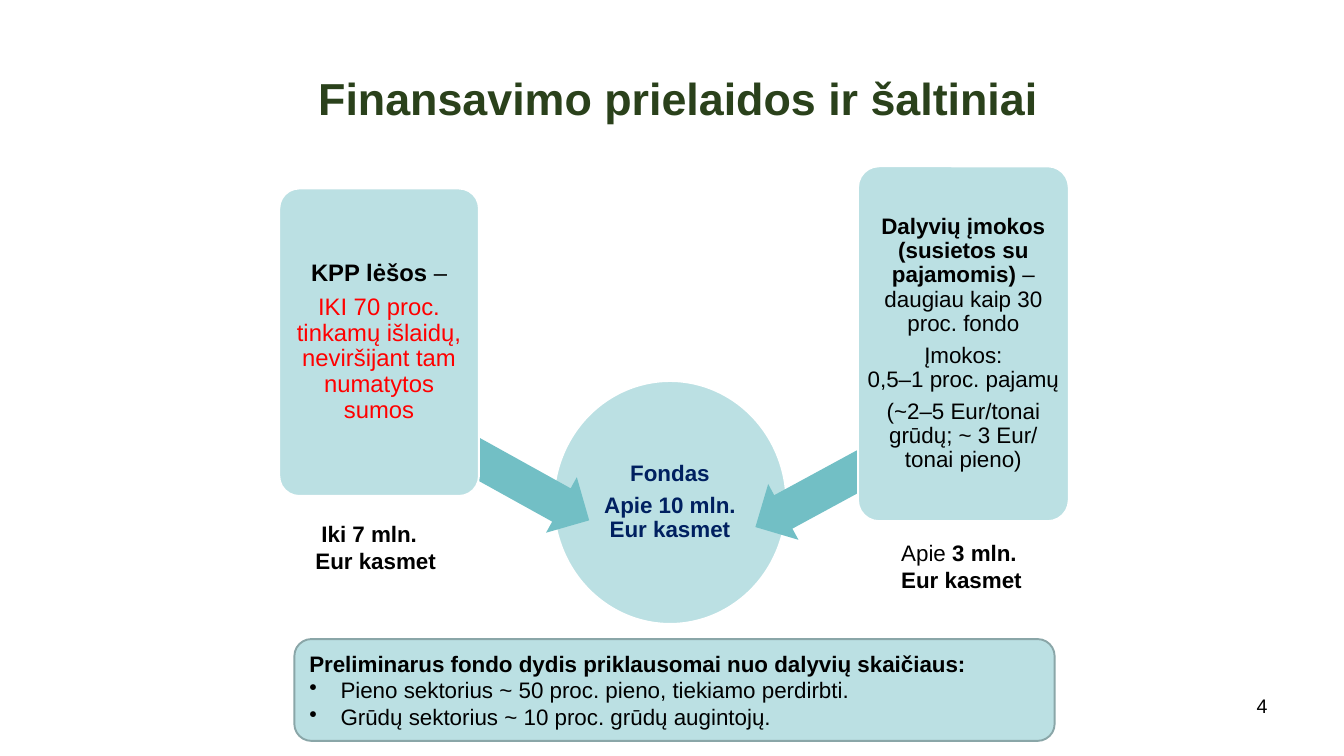
from lxml import etree
from pptx import Presentation, util as u
from pptx.dml import color
from pptx.enum import shapes, text
from pptx.oxml import ns

COLORS = {
    "title": "2A411B", "black": "000000", "red": "FF0000", "navy": "002060",
    "panel": "BBE0E3", "arrow": "72BFC5", "white": "FFFFFF", "edge": "8AA6A8",
}
KIND = shapes.MSO_SHAPE
ALIGN = text.PP_ALIGN
ANCHOR = text.MSO_ANCHOR


class FundingSlide:
    """Style and drawing methods for the funding slide."""

    font = "Arial"

    def __init__(self, deck):
        self.slide = deck.slides.add_slide(deck.slide_layouts[6])

    def rgb(self, name):
        return color.RGBColor.from_string(COLORS[name])

    def fill_text(self, frame, paragraphs, size, align=ALIGN.LEFT, anchor=ANCHOR.TOP,
                  inset=None, spacing=None, first_indent=0):
        frame.word_wrap = True
        frame.vertical_anchor = anchor
        if inset is not None:
            frame.margin_left = frame.margin_right = u.Inches(inset)
            frame.margin_top = frame.margin_bottom = u.Inches(inset)
        for index, (runs, after, bulleted) in enumerate(paragraphs):
            line = frame.paragraphs[0] if index == 0 else frame.add_paragraph()
            line.alignment = align
            properties = line._p.get_or_add_pPr()
            if bulleted:
                properties.set("marL", str(u.Inches(0.31)))
                properties.set("indent", str(u.Inches(-0.31)))
                etree.SubElement(properties, ns.qn("a:buChar")).set("char", "•")
            elif first_indent:
                properties.set("indent", str(u.Inches(first_indent)))
            if spacing:
                line.line_spacing = spacing
                line.space_after = u.Pt(after)
            for words, bold, tint in runs:
                run = line.add_run()
                run.text = words
                run.font.name = self.font
                run.font.size = u.Pt(size)
                run.font.bold = bold
                run.font.color.rgb = self.rgb(tint)

    def label(self, place, runs, size, **layout):
        box = self.slide.shapes.add_textbox(*map(u.Inches, place))
        self.fill_text(box.text_frame, [(runs, 0, False)], size, **layout)

    def shape(self, kind, place, fill, edge=None, adjust=(), turn=0):
        drawn = self.slide.shapes.add_shape(kind, *map(u.Inches, place))
        drawn.shadow.inherit = False
        drawn.rotation = turn
        drawn.fill.solid()
        drawn.fill.fore_color.rgb = self.rgb(fill)
        for index, value in enumerate(adjust):
            drawn.adjustments[index] = value
        if edge:
            drawn.line.color.rgb = self.rgb(edge)
            drawn.line.width = u.Pt(1.35)
        else:
            drawn.line.fill.background()
        return drawn

    def panel(self, kind, place, paragraphs, size, inset, adjust=()):
        drawn = self.shape(kind, place, "panel", "white", adjust)
        self.fill_text(drawn.text_frame, paragraphs, size, ALIGN.CENTER,
                       ANCHOR.MIDDLE, inset, spacing=0.9)

    def arrow(self, place, turn):
        self.shape(KIND.LEFT_ARROW, place, "arrow", adjust=(0.6, 0.5), turn=turn)

    def summary(self, place, paragraphs):
        drawn = self.shape(KIND.ROUNDED_RECTANGLE, place, "panel", "edge")
        self.fill_text(drawn.text_frame, paragraphs, 16, anchor=ANCHOR.MIDDLE)


def main():
    deck = Presentation()
    deck.slide_width, deck.slide_height = u.Inches(13.33), u.Inches(7.5)
    funding = FundingSlide(deck)

    funding.label((0.73, 0.5, 12, 0.94),
                  [("Finansavimo prielaidos ir šaltiniai", True, "title")], 32,
                  align=ALIGN.CENTER, anchor=ANCHOR.MIDDLE)
    funding.label((9.56, 6.83, 3.11, 0.52), [("4", False, "black")], 14,
                  align=ALIGN.RIGHT)

    funding.panel(KIND.OVAL, (5.49, 3.78, 2.31, 2.41), [
        ([("Fondas", True, "navy")], 5.5, False),
        ([("Apie 10 mln. Eur kasmet", True, "navy")], 5.5, False),
    ], 16, 0.01)

    funding.arrow((3.96, 4.36, 2.01, 0.63), 209)
    funding.panel(KIND.ROUNDED_RECTANGLE, (2.77, 1.87, 1.98, 3.05), [
        ([("KPP lėšos ", True, "black"), ("–", False, "black")], 6, False),
        ([("IKI 70 proc. tinkamų išlaidų, neviršijant tam numatytos sumos",
           False, "red")], 6, False),
    ], 17, 0.04, (0.1,))

    funding.arrow((7.37, 4.43, 2.03, 0.63), 331.5)
    funding.panel(KIND.ROUNDED_RECTANGLE, (8.51, 1.65, 2.09, 3.52), [
        ([("Dalyvių įmokos (susietos su pajamomis) ", True, "black"),
          ("– daugiau kaip 30 proc. fondo", False, "black")], 5.5, False),
        ([("Įmokos:", False, "black")], 0, False),
        ([("0,5–1 proc. pajamų", False, "black")], 5.5, False),
        ([("(~2–5 Eur/tonai grūdų; ~ 3 Eur/ tonai pieno)", False, "black")],
         5.5, False),
    ], 16, 0.03, (0.1,))

    funding.label((8.84, 5.3, 1.62, 0.64),
                  [("Apie ", False, "black"), ("3 mln. Eur kasmet", True, "black")],
                  16)
    funding.label((3.03, 5.11, 1.62, 0.64),
                  [("Iki 7 mln. Eur kasmet", True, "black")], 16,
                  first_indent=0.06)

    funding.summary((2.92, 6.34, 7.54, 1.01), [
        ([("Preliminarus fondo dydis priklausomai nuo dalyvių skaičiaus:",
           True, "black")], 0, False),
        ([("Pieno sektorius ~ 50 proc. pieno, tiekiamo perdirbti.",
           False, "black")], 0, True),
        ([("Grūdų sektorius ~ 10 proc. grūdų augintojų.", False, "black")], 0, True),
    ])
    deck.save("out.pptx")


if __name__ == "__main__":
    main()
